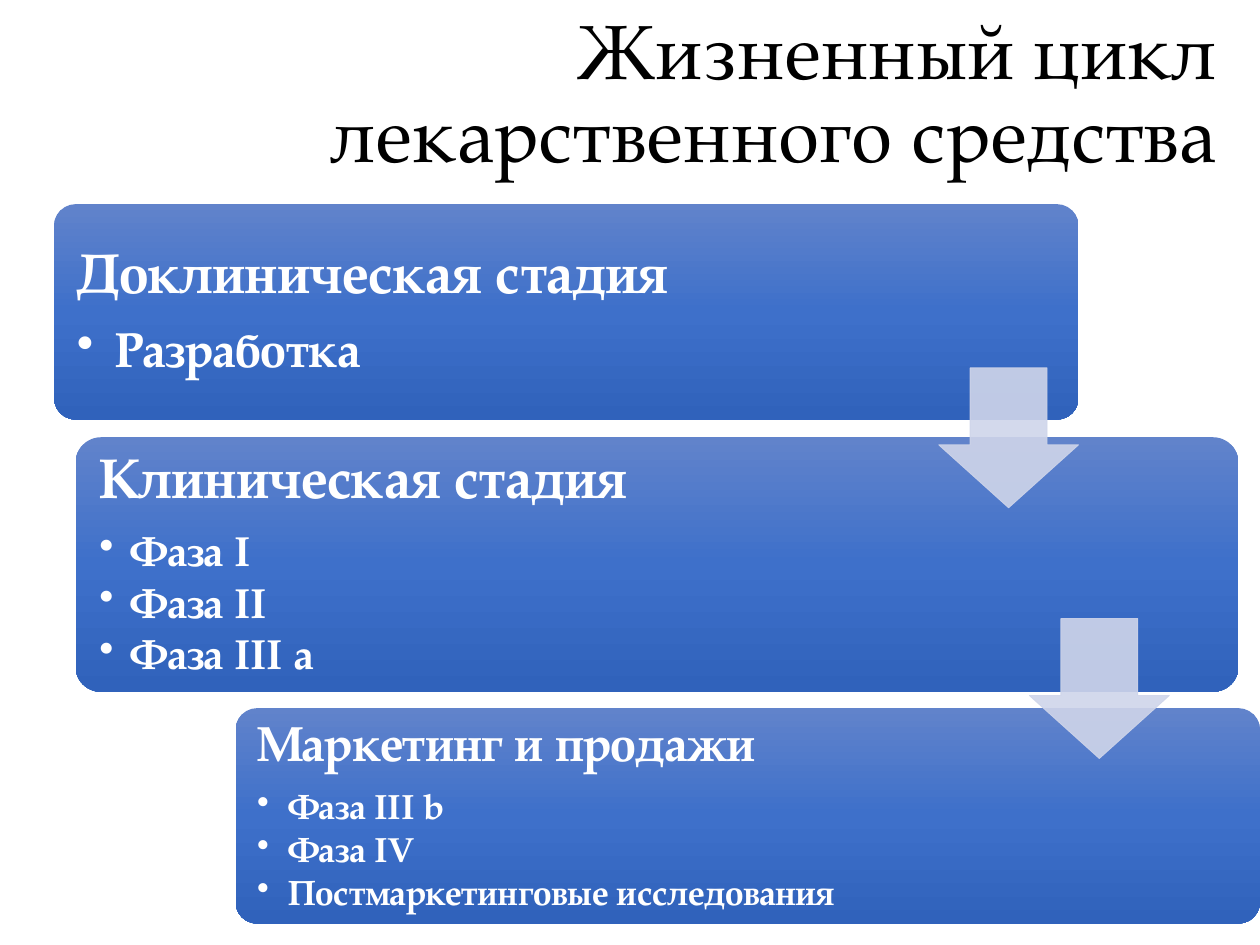
import copy

import pptx
import pptx.dml.color
import pptx.enum.shapes
import pptx.enum.text
import pptx.oxml.ns
import pptx.util
from lxml import etree

Inches = pptx.util.Inches
Pt = pptx.util.Pt
qn = pptx.oxml.ns.qn
SHAPE = pptx.enum.shapes.MSO_SHAPE
FONT = "TeX Gyre Pagella"
COLORS = {
    "title": "000000",
    "text": "FFFFFF",
    "top": "6183CB",
    "mid": "3E70CA",
    "base": "3062BB",
    "arrow": "CFD5EA",
}
STAGES = [
    ((0.43, 1.62, 8.13, 1.71), (0.05, 6.28), 0.13, 0.31, 32, 28,
     "Доклиническая стадия", ["Разработка"]),
    ((0.6, 3.47, 9.23, 2.02), (0.06, 7.03), 0.13, 0.25, 32, 24,
     "Клиническая стадия", ["Фаза I", "Фаза II", "Фаза III a"]),
    ((1.87, 5.62, 8.13, 1.71), (0.05, 6.2), 0.12, 0.25, 28, 20,
     "Маркетинг и продажи",
     ["Фаза III b", "Фаза IV", "Постмаркетинговые исследования"]),
]
ARROWS = [(7.45, 2.92, 1.11, 1.11), (8.17, 4.91, 1.11, 1.11)]


def color(name):
    return pptx.dml.color.RGBColor.from_string(COLORS[name])


def style(para, size, name, bold=False):
    para.line_spacing = 0.9
    font = para.font
    font.name = FONT
    font.size = Pt(size)
    font.bold = bold
    font.color.rgb = color(name)


def add_text(slide, box):
    frame = slide.shapes.add_textbox(*map(Inches, box)).text_frame
    frame.word_wrap = True
    frame.vertical_anchor = pptx.enum.text.MSO_ANCHOR.MIDDLE
    return frame


def add_shape(slide, kind, box, adjust):
    shape = slide.shapes.add_shape(kind, *map(Inches, box))
    shape.shadow.inherit = False
    for i, value in enumerate(adjust):
        shape.adjustments[i] = value
    return shape


def add_title(slide, box):
    para = add_text(slide, box).paragraphs[0]
    para.text = "Жизненный цикл\vлекарственного средства"
    para.alignment = pptx.enum.text.PP_ALIGN.RIGHT
    style(para, 44, "title")


def shade(fill):
    fill.gradient()
    fill.gradient_angle = 270
    stops = fill.gradient_stops
    first = stops[0].color
    first.rgb = color("top")
    stops[1].color.rgb = color("base")
    node = fill._fill._gradFill.find(qn("a:gsLst"))
    node.insert(1, copy.deepcopy(node[0]))
    names = ("top", "mid", "base")
    for i, (stop, name) in enumerate(zip(fill.gradient_stops, names)):
        stop.position = i / 2
        stop.color.rgb = color(name)


def space_after(para, percent):
    after = etree.SubElement(para._p.get_or_add_pPr(), qn("a:spcAft"))
    etree.SubElement(after, qn("a:spcPct"), val=str(percent * 1000))


def add_bullet(para, indent):
    props = para._p.get_or_add_pPr()
    props.set("marL", str(Inches(indent)))
    props.set("indent", str(-Inches(indent)))
    etree.SubElement(props, qn("a:buChar"), char="•")


def add_stage(slide, box, area, inset, indent, big, small, head, items):
    card = add_shape(slide, SHAPE.ROUNDED_RECTANGLE, box, [0.1])
    shade(card.fill)
    card.line.fill.background()
    left, top, width, height = box
    pad, wide = area
    frame = add_text(slide, (left + pad, top + pad, wide, height - 2 * pad))
    frame.margin_left = frame.margin_right = Inches(inset)
    frame.margin_top = frame.margin_bottom = Inches(inset)
    para = frame.paragraphs[0]
    para.text = head
    space_after(para, 35)
    style(para, big, "text", True)
    for item in items:
        para = frame.add_paragraph()
        para.text = item
        para.level = 1
        space_after(para, 15)
        add_bullet(para, indent)
        style(para, small, "text", True)


def add_arrow(slide, box):
    arrow = add_shape(slide, SHAPE.DOWN_ARROW, box, [0.55, 0.45])
    arrow.line.width = Pt(0.5)
    for fill in (arrow.fill, arrow.line.fill):
        fill.solid()
        fill.fore_color.rgb = color("arrow")
    for node in arrow._element.spPr.iter(qn("a:srgbClr")):
        etree.SubElement(node, qn("a:alpha"), val="90000")


def main():
    deck = pptx.Presentation()
    deck.slide_width = Inches(10)
    deck.slide_height = Inches(7.5)
    slide = deck.slides.add_slide(deck.slide_layouts[6])
    add_title(slide, (1.88, 0.25, 7.88, 1.02))
    for stage in STAGES:
        add_stage(slide, *stage)
    for box in ARROWS:
        add_arrow(slide, box)
    deck.save("out.pptx")


if __name__ == "__main__":
    main()
